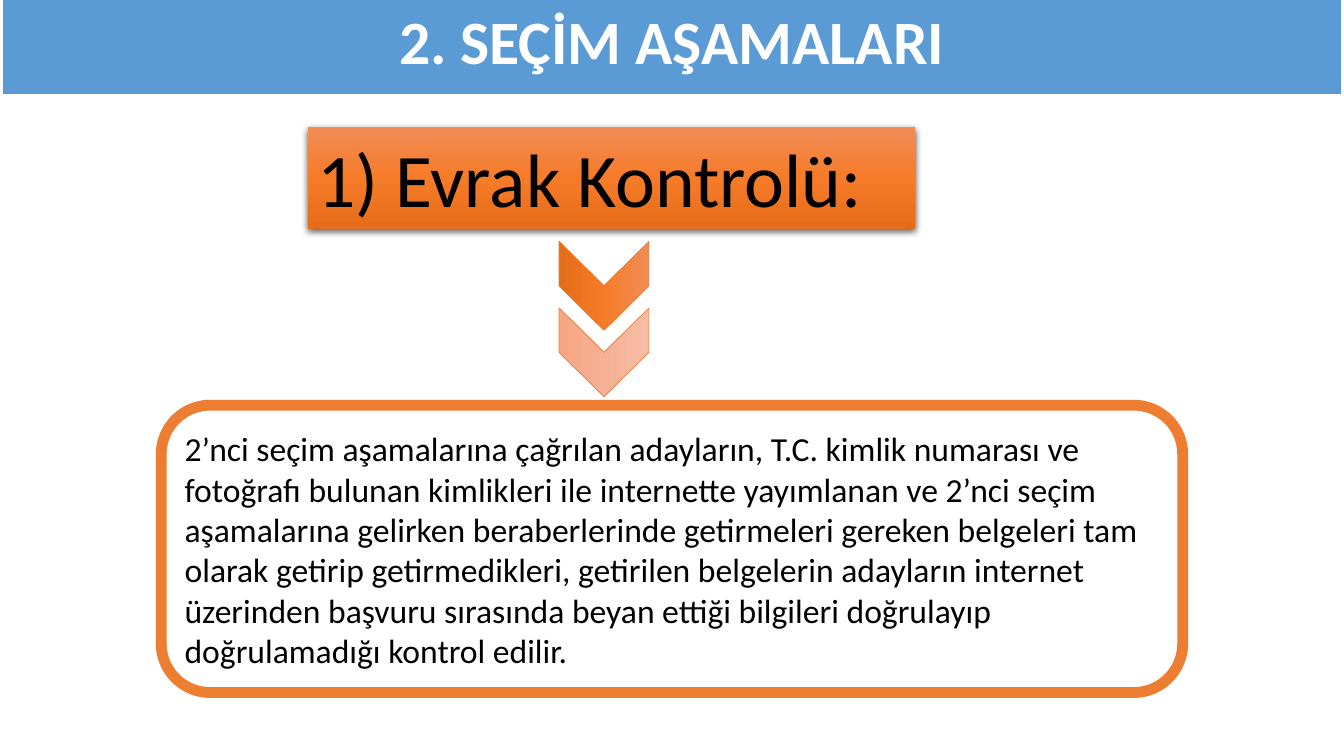
from lxml.etree import SubElement
from pptx import Presentation
from pptx.dml.color import RGBColor
from pptx.enum.shapes import MSO_SHAPE
from pptx.enum.text import MSO_ANCHOR, PP_ALIGN
from pptx.oxml import parse_xml
from pptx.oxml.ns import nsdecls, qn
from pptx.util import Inches, Pt

WHITE = RGBColor(0xFF, 0xFF, 0xFF)
BLACK = RGBColor(0x00, 0x00, 0x00)
BLUE = RGBColor(0x5B, 0x9B, 0xD5)
ORANGE = RGBColor(0xED, 0x7D, 0x31)
STRONG_STOPS = [RGBColor(0xF1, 0x8C, 0x57), RGBColor(0xF6, 0x7B, 0x28), RGBColor(0xE5, 0x6C, 0x19)]
PALE_STOPS = [RGBColor(0xF7, 0xBD, 0xA5), RGBColor(0xF5, 0xB1, 0x96), RGBColor(0xF8, 0xA5, 0x82)]

presentation = Presentation()
presentation.slide_width = Inches(13.33)
presentation.slide_height = Inches(7.5)
slide = presentation.slides.add_slide(presentation.slide_layouts[6])
column = presentation.slide_width / 100
row = presentation.slide_height / 100


def add_block(kind, left, top, width, height, fill, line=None, line_width=0):
    shape = slide.shapes.add_shape(
        kind, int(left * column), int(top * row), int(width * column), int(height * row))
    shape.shadow.inherit = False
    if isinstance(fill, list):
        shape.fill.gradient()
        gradient = shape._element.spPr.find(qn("a:gradFill"))
        stops = gradient.find(qn("a:gsLst"))
        for stop in list(stops):
            stops.remove(stop)
        for index, color in enumerate(fill):
            stop = SubElement(stops, qn("a:gs"), pos=str(index * 50000))
            SubElement(stop, qn("a:srgbClr"), val=str(color))
        gradient.find(qn("a:lin")).set("ang", "5400000")
    elif fill is None:
        shape.fill.background()
    else:
        shape.fill.solid()
        shape.fill.fore_color.rgb = fill
    if line is None:
        shape.line.fill.background()
    else:
        shape.line.color.rgb = line
        shape.line.width = Pt(line_width)
    return shape


def write(shape, text, size, color, alignment=PP_ALIGN.LEFT, anchor=MSO_ANCHOR.TOP):
    shape.text_frame.word_wrap = True
    shape.text_frame.vertical_anchor = anchor
    paragraph = shape.text_frame.paragraphs[0]
    paragraph.text = text
    paragraph.alignment = alignment
    paragraph.font.name = "Calibri"
    paragraph.font.size = Pt(size)
    paragraph.font.color.rgb = color
    return paragraph


frame = add_block(MSO_SHAPE.ROUNDED_RECTANGLE, 12, 53.6, 76, 38, WHITE, ORANGE, 7.75)
frame.adjustments[0] = 0.17

description = add_block(MSO_SHAPE.RECTANGLE, 13, 56, 75, 33.6, None)
write(description, "2’nci seçim aşamalarına çağrılan adayların, T.C. kimlik numarası ve fotoğrafı "
      "bulunan kimlikleri ile internette yayımlanan ve 2’nci seçim aşamalarına gelirken "
      "beraberlerinde getirmeleri gereken belgeleri tam olarak getirip getirmedikleri, "
      "getirilen belgelerin adayların internet üzerinden başvuru sırasında beyan ettiği "
      "bilgileri doğrulayıp doğrulamadığı kontrol edilir.", 24, BLACK)

banner = add_block(MSO_SHAPE.RECTANGLE, 0.15, -0.67, 99.7, 13.2, BLUE, WHITE, 1.5)
title = write(banner, "2. SEÇİM AŞAMALARI", 44, WHITE, PP_ALIGN.CENTER, MSO_ANCHOR.MIDDLE)
title.font.bold = True
title.line_spacing = 0.9

heading = add_block(MSO_SHAPE.RECTANGLE, 22.88, 16.8, 45.24, 13.47, STRONG_STOPS)
write(heading, "1) Evrak Kontrolü:", 54, BLACK)
heading_effects = heading._element.spPr.find(qn("a:effectLst"))
heading_effects.append(parse_xml(
    f'<a:outerShdw {nsdecls("a")} blurRad="{Pt(4.5)}" dist="{Pt(1.5)}" dir="5400000" '
    'algn="ctr" rotWithShape="0"><a:srgbClr val="000000"><a:alpha val="63000"/>'
    '</a:srgbClr></a:outerShdw>'))

for index, stops in enumerate([STRONG_STOPS, PALE_STOPS]):
    chevron = add_block(MSO_SHAPE.CHEVRON, 41.64, 31.87 + index * 8.8, 6.6, 11.87,
                        stops, ORANGE, 0.5)
    chevron.rotation = 90

presentation.save("out.pptx")
